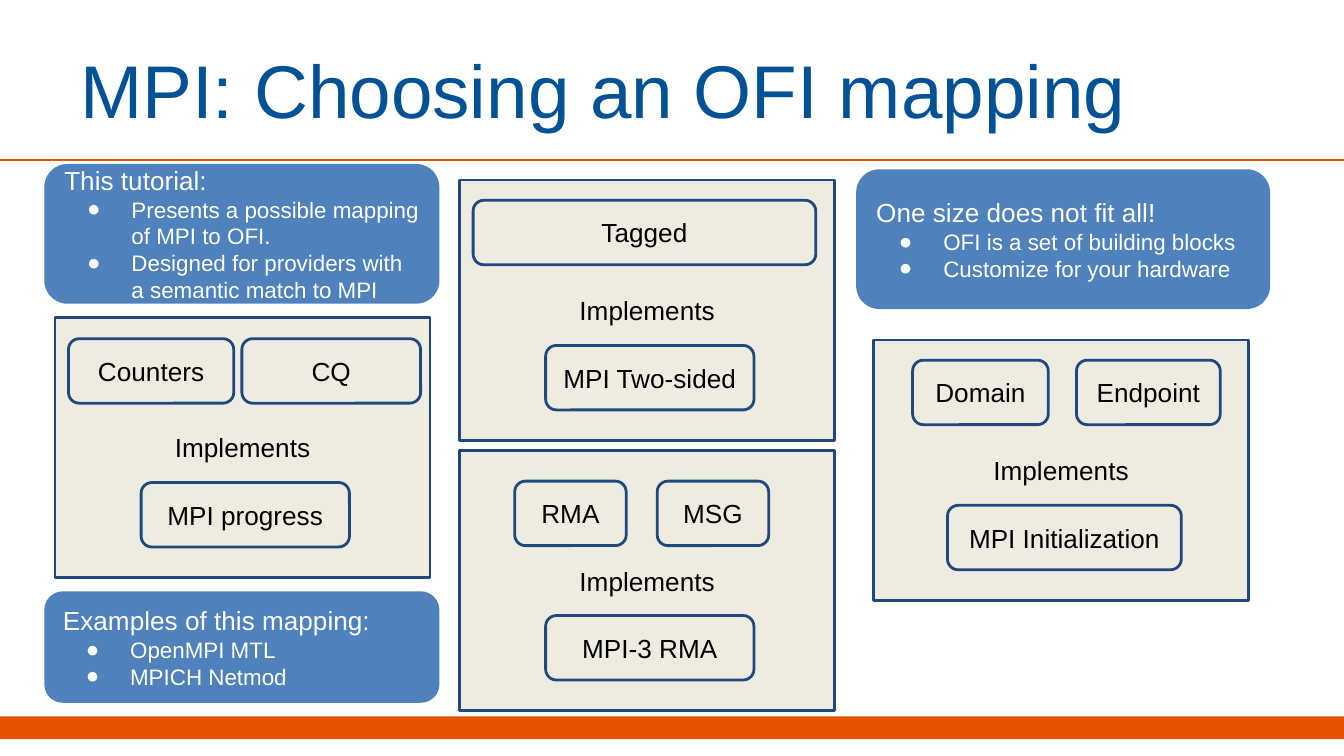
from lxml import etree
from pptx import Presentation
from pptx.dml.color import RGBColor
from pptx.enum.shapes import MSO_CONNECTOR, MSO_SHAPE
from pptx.enum.text import MSO_ANCHOR, PP_ALIGN
from pptx.oxml.ns import qn
from pptx.util import Inches, Pt

RECT, ROUND = MSO_SHAPE.RECTANGLE, MSO_SHAPE.ROUNDED_RECTANGLE
STRAIGHT = MSO_CONNECTOR.STRAIGHT
MIDDLE = MSO_ANCHOR.MIDDLE
LEFT, CENTER = PP_ALIGN.LEFT, PP_ALIGN.CENTER

ORANGE = RGBColor(0xE5, 0x53, 0x02)
TITLE = RGBColor(0x00, 0x51, 0x95)
NAVY = RGBColor(0x1F, 0x49, 0x7D)
BLUE = RGBColor(0x4F, 0x81, 0xBD)
CREAM = RGBColor(0xEE, 0xEC, 0xE1)
BLACK = RGBColor(0, 0, 0)
WHITE = RGBColor(255, 255, 255)

WIDE = 10
HIGH = WIDE * 9 / 16
COLS = (0.33, 3.42, 6.37)        # left edges of the three columns
BOX_W, BOX_H = 2.79, 1.94        # one mapping panel
TAG_H = 0.48                     # one label inside a panel
BASE = 1.23                      # drop from panel top to its MPI label


def add_box(kind, x, y, w, h, fill, edge=None):
    box = slide.shapes.add_shape(kind, Inches(x), Inches(y), Inches(w), Inches(h))
    box.shadow.inherit = False
    box.fill.solid()
    box.fill.fore_color.rgb = fill
    if edge is None:
        box.line.fill.background()
    else:
        box.line.color.rgb = edge
        box.line.width = Pt(1.5)
    return box


def add_text(box, lines, color, align=LEFT):
    """Write (text, size, bulleted) lines into a box, centred vertically."""
    frame = box.text_frame
    frame.word_wrap = True
    frame.vertical_anchor = MIDDLE
    frame.margin_left = frame.margin_right = Inches(0.1)
    frame.margin_top = frame.margin_bottom = Inches(0.1)
    for i, (text, size, dot) in enumerate(lines):
        para = frame.add_paragraph() if i else frame.paragraphs[0]
        para.alignment = align
        if dot:
            props = para._p.get_or_add_pPr()
            props.set("marL", str(Inches(0.5)))
            props.set("indent", str(Inches(-0.33)))
            tint = etree.SubElement(props, qn("a:buClr"))
            etree.SubElement(tint, qn("a:srgbClr"), val=str(color))
            etree.SubElement(props, qn("a:buFont"), typeface="Arial")
            etree.SubElement(props, qn("a:buChar"), char="●")
        run = para.add_run()
        run.text = text
        run.font.name = "Arial"
        run.font.size = Pt(size)
        run.font.color.rgb = color


deck = Presentation()
deck.slide_width, deck.slide_height = Inches(WIDE), Inches(HIGH)
slide = deck.slides.add_slide(deck.slide_layouts[6])

# Footer band, rule and title
add_box(RECT, 0, 5.33, WIDE, 0.17, ORANGE)
rule = slide.shapes.add_connector(STRAIGHT, 0, Inches(1.19), Inches(WIDE), Inches(1.19))
rule.line.color.rgb = ORANGE
rule.line.width = Pt(1)
etree.SubElement(rule._element.spPr, qn("a:effectLst"))
head = slide.shapes.add_textbox(Inches(0.5), Inches(0.19), Inches(8.17), Inches(0.94))
add_text(head, [("MPI: Choosing an OFI mapping", 40, False)], TITLE)

# Panels: left, top, labels as (text, shift right, shift down, width)
panels = [
    (COLS[0] + 0.08, 2.36, [("Counters", 0.1, 0.16, 1.23), ("CQ", 1.39, 0.16, 1.33),
                            ("MPI progress", 0.64, BASE, 1.55)]),
    (COLS[1], 1.34, [("Tagged", 0.1, 0.15, 2.55),
                     ("MPI Two-sided", 0.64, BASE, 1.55)]),
    (COLS[1], 3.35, [("RMA", 0.41, 0.23, 0.83), ("MSG", 1.47, 0.23, 0.83),
                     ("MPI-3 RMA", 0.64, BASE, 1.55)]),
    (COLS[2] + 0.13, 2.53, [("Domain", 0.29, 0.15, 1.01), ("Endpoint", 1.51, 0.15, 1.07),
                            ("MPI Initialization", 0.55, BASE, 1.74)]),
]
for x, y, tags in panels:
    panel = add_box(RECT, x, y, BOX_W, BOX_H, CREAM, NAVY)
    add_text(panel, [("Implements", 14, False)], BLACK, CENTER)
    for text, right, down, w in tags:
        tag = add_box(ROUND, x + right, y + down, w, TAG_H, CREAM, NAVY)
        add_text(tag, [(text, 14, False)], BLACK, CENTER)

# Blue notes: left, top, width, height, heading, bullets
notes = [
    (COLS[2], 1.26, 3.08, 1.04, "One size does not fit all!",
     ["OFI is a set of building blocks", "Customize for your hardware"]),
    (COLS[0], 1.22, 2.94, 1.04, "This tutorial:",
     ["Presents a possible mapping of MPI to OFI.",
      "Designed for providers with a semantic match to MPI"]),
    (COLS[0], 4.4, 2.94, 0.83, "Examples of this mapping:",
     ["OpenMPI MTL", "MPICH Netmod"]),
]
for x, y, w, h, top, points in notes:
    note = add_box(ROUND, x, y, w, h, BLUE)
    add_text(note, [(top, 14, False)] + [(point, 12, True) for point in points], WHITE)

deck.save("out.pptx")
